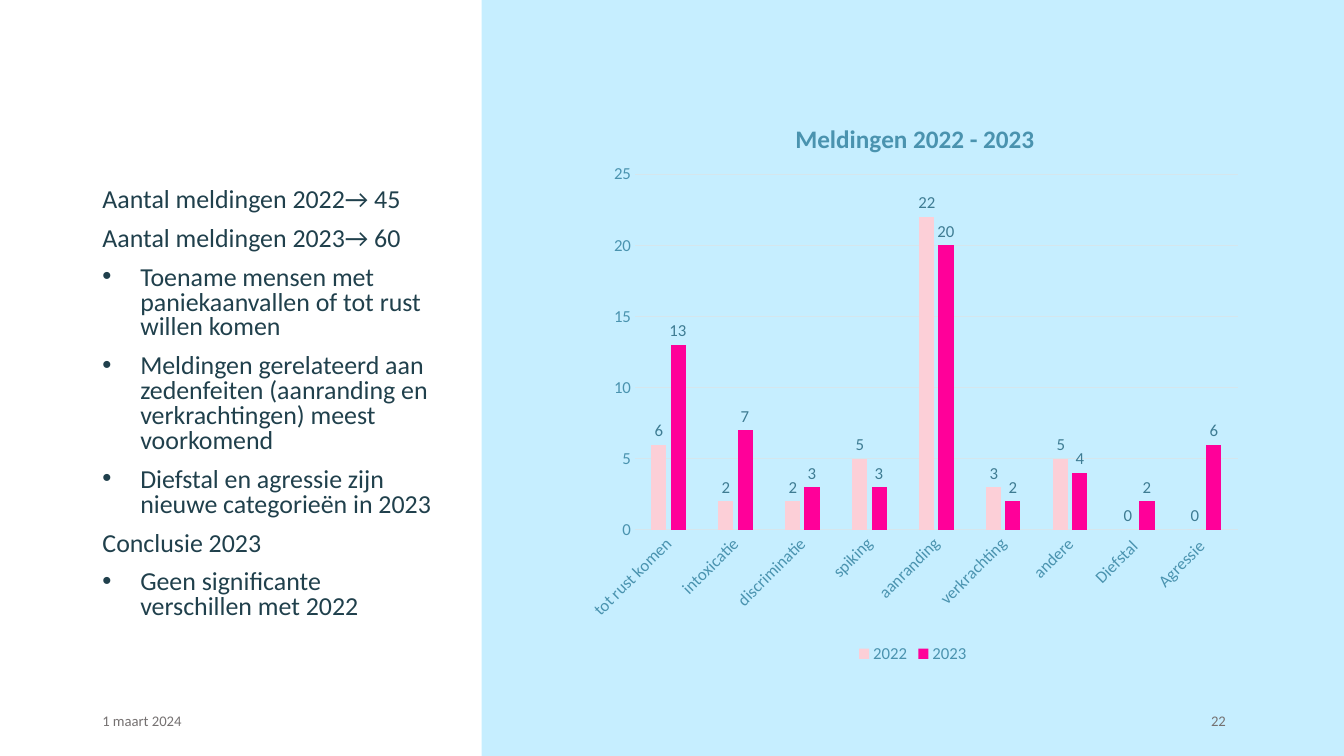
import pptx
import pptx.chart.data
import pptx.dml.color
import pptx.enum.chart
import pptx.enum.shapes
import pptx.enum.text
import pptx.oxml
import pptx.oxml.ns
import pptx.util

Pt = pptx.util.Pt
qn = pptx.oxml.ns.qn
COLORS = {
    "panel": "C6EEFF", "text": "20404C", "footer": "757171", "axis": "4A93AF",
    "grid": "D5E6ED", "label": "3E7C93", "2022": "FCCFD7", "2023": "FF0099",
}
BODY = [
    ("Aantal meldingen 2022→ 45", False),
    ("Aantal meldingen 2023→ 60", False),
    ("Toename mensen met paniekaanvallen of tot rust willen komen", True),
    ("Meldingen gerelateerd aan zedenfeiten (aanranding en verkrachtingen) meest voorkomend", True),
    ("Diefstal en agressie zijn nieuwe categorieën in 2023", True),
    ("Conclusie 2023", False),
    ("Geen significante verschillen met 2022", True),
]
CATEGORIES = ["tot rust komen", "intoxicatie", "discriminatie", "spiking", "aanranding",
              "verkrachting", "andere", "Diefstal ", "Agressie "]
REPORTS = {
    "2022": [6, 2, 2, 5, 22, 3, 5, 0, 0],
    "2023": [13, 7, 3, 3, 20, 2, 4, 2, 6],
}


class SlideBuilder:
    def __init__(self, slide, font="Calibri"):
        self.slide = slide
        self.font = font

    def color(self, name):
        return pptx.dml.color.RGBColor.from_string(COLORS[name])

    def style(self, font, size, color, bold=False):
        font.name = self.font
        font.size = Pt(size)
        font.bold = bold
        font.color.rgb = self.color(color)

    def fill(self, fill, color):
        fill.solid()
        fill.fore_color.rgb = self.color(color)

    def panel(self, x, y, w, h, color):
        s = self.slide.shapes.add_shape(
            pptx.enum.shapes.MSO_SHAPE.RECTANGLE, Pt(x), Pt(y), Pt(w), Pt(h))
        s.shadow.inherit = False
        self.fill(s.fill, color)
        s.line.fill.background()

    def text(self, x, y, w, h, text, size, color):
        s = self.slide.shapes.add_textbox(Pt(x), Pt(y), Pt(w), Pt(h))
        tf = s.text_frame
        tf.word_wrap = True
        tf.vertical_anchor = pptx.enum.text.MSO_ANCHOR.MIDDLE
        tf.text = text
        self.style(tf.paragraphs[0].runs[0].font, size, color)

    def body(self, x, y, w, h, items, size, color, indent=27):
        s = self.slide.placeholders[1]
        s.left, s.top, s.width, s.height = Pt(x), Pt(y), Pt(w), Pt(h)
        tf = s.text_frame
        tf.auto_size = pptx.enum.text.MSO_AUTO_SIZE.NONE
        tf.text = "\n".join(text for text, _ in items)
        for i, (p, (_, bulleted)) in enumerate(zip(tf.paragraphs, items)):
            p.line_spacing = 0.8
            p.space_before = Pt(10 if i else 0)
            pPr = p._p.get_or_add_pPr()
            offset = Pt(indent) if bulleted else 0
            pPr.set("marL", str(offset))
            pPr.set("indent", str(-offset))
            if bulleted:
                pPr.append(pptx.oxml.parse_xml(
                    f'<a:buFont {pptx.oxml.ns.nsdecls("a")} typeface="Arial"/>'))
                bullet = '<a:buChar {} char="•"/>'
            else:
                bullet = "<a:buNone {}/>"
            pPr.append(pptx.oxml.parse_xml(bullet.format(pptx.oxml.ns.nsdecls("a"))))
            self.style(p.runs[0].font, size, color)

    def place(self, parent, before, **fractions):
        for old in parent.findall(qn("c:layout")):
            parent.remove(old)
        target = '<c:layoutTarget val="inner"/>' if "w" in fractions else ""
        modes = "".join(f'<c:{k}Mode val="edge"/>' for k in fractions if k in "xy")
        values = "".join(f'<c:{k} val="{v}"/>' for k, v in fractions.items())
        layout = pptx.oxml.parse_xml(
            f'<c:layout {pptx.oxml.ns.nsdecls("c")}><c:manualLayout>'
            f"{target}{modes}{values}</c:manualLayout></c:layout>")
        parent.find(qn(before)).addprevious(layout)

    def chart(self, x, y, w, h, title, categories, series):
        data = pptx.chart.data.CategoryChartData()
        data.categories = categories
        for name, values in series.items():
            data.add_series(name, values)
        enums = pptx.enum.chart
        chart = self.slide.shapes.add_chart(
            enums.XL_CHART_TYPE.COLUMN_CLUSTERED, Pt(x), Pt(y), Pt(w), Pt(h), data).chart
        self.style(chart.font, 10, "text")

        chart.has_title = True
        tf = chart.chart_title.text_frame
        tf.text = title
        self.style(tf.paragraphs[0].runs[0].font, 18, "axis", bold=True)
        chart.chart_title.include_in_layout = False
        self.place(chart.chart_title._element, "c:overlay", x=0.32, y=0.04)
        plot_area = chart._chartSpace.chart.plotArea
        self.place(plot_area, "c:barChart", x=0.09, y=0.14, w=0.89, h=0.62)

        chart.has_legend = True
        chart.legend.position = enums.XL_LEGEND_POSITION.BOTTOM
        chart.legend.include_in_layout = False
        self.style(chart.legend.font, 12, "axis")

        for axis in (chart.category_axis, chart.value_axis):
            axis.major_tick_mark = enums.XL_TICK_MARK.NONE
            axis.minor_tick_mark = enums.XL_TICK_MARK.NONE
            self.style(axis.tick_labels.font, 12, "axis")
        value_axis = chart.value_axis
        value_axis.minimum_scale, value_axis.maximum_scale = 0, 25
        value_axis.major_unit = 5
        value_axis.format.line.fill.background()
        for line in (chart.category_axis.format.line, value_axis.major_gridlines.format.line):
            line.color.rgb = self.color("grid")
            line.width = Pt(0.75)
        rotation = chart.category_axis._element.find(qn("c:txPr")).find(qn("a:bodyPr"))
        rotation.set("rot", "-2700000")
        rotation.set("vert", "horz")

        plot = chart.plots[0]
        plot.gap_width, plot.overlap = 219, -27
        plot.vary_by_categories = False
        for ser in plot.series:
            self.fill(ser.format.fill, ser.name)
            labels = ser.data_labels
            labels.show_value = True
            labels.position = enums.XL_LABEL_POSITION.OUTSIDE_END
            self.style(labels.font, 12, "label")


def main():
    prs = pptx.Presentation()
    prs.slide_width, prs.slide_height = Pt(960), Pt(540)
    slide = prs.slides.add_slide(prs.slide_layouts[1])
    title = slide.shapes.title._element
    title.getparent().remove(title)
    b = SlideBuilder(slide)
    b.panel(344, 0, 616, 540, "panel")
    b.text(66, 500.5, 85, 29, "1 maart 2024", 10.5, "footer")
    b.text(858, 500.5, 36, 29, "22", 10.5, "footer")
    b.body(66, 131, 253, 346, BODY, 18.5, "text")
    b.chart(410, 67, 484, 410, "Meldingen 2022 - 2023", CATEGORIES, REPORTS)
    prs.save("out.pptx")


if __name__ == "__main__":
    main()
